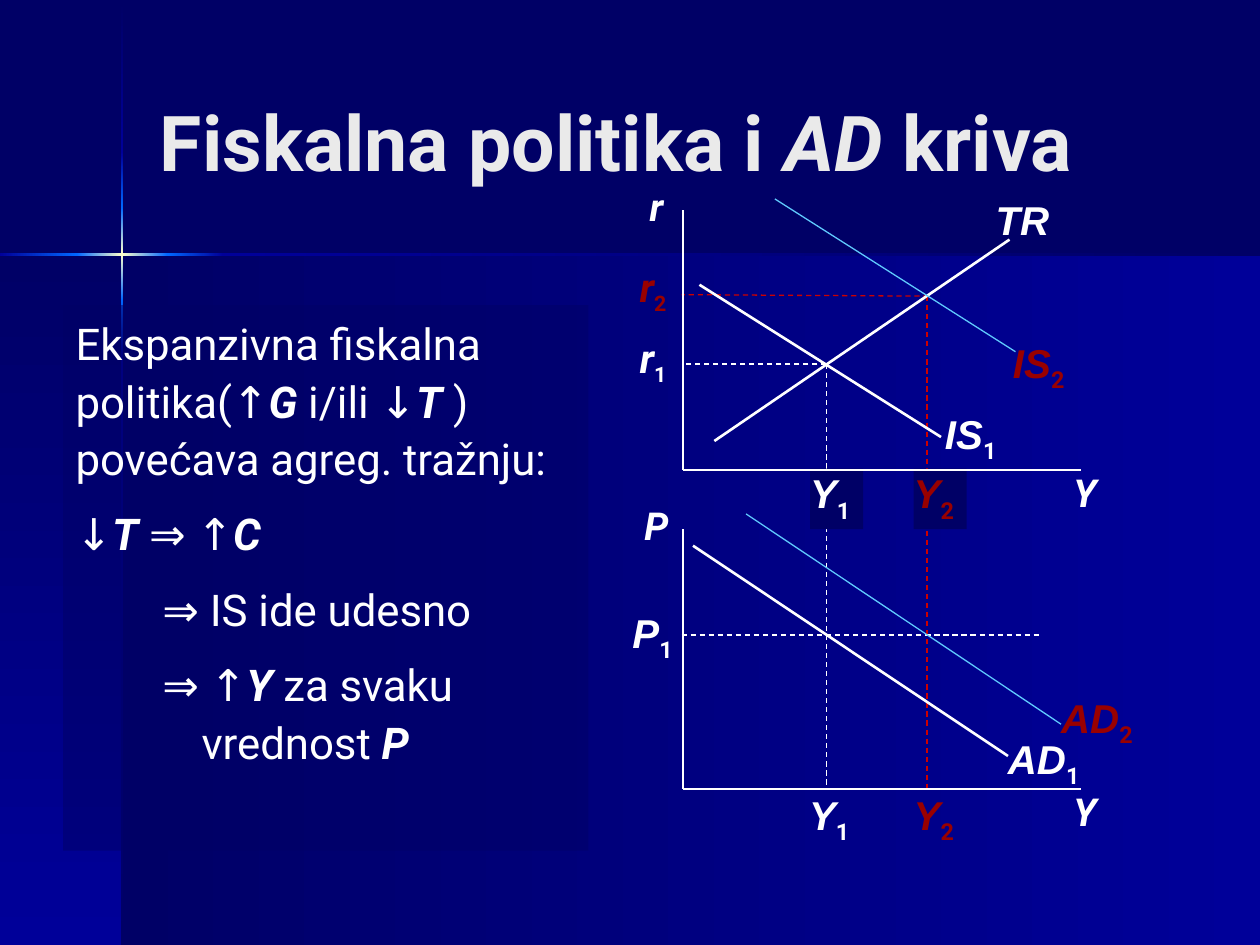
from dataclasses import dataclass
from typing import Optional

from lxml.etree import SubElement
from pptx import Presentation
from pptx.dml.color import RGBColor
from pptx.enum.dml import MSO_LINE
from pptx.enum.shapes import MSO_CONNECTOR, MSO_SHAPE
from pptx.enum.text import MSO_ANCHOR, MSO_AUTO_SIZE, PP_ALIGN
from pptx.oxml.ns import qn
from pptx.util import Cm, Pt

NIGHT = RGBColor(0x00, 0x00, 0x66)
ROYAL = RGBColor(0x00, 0x00, 0x99)
AZURE = RGBColor(0x00, 0x66, 0xFF)
CREAM = RGBColor(0xFF, 0xFF, 0xCC)
WHITE = RGBColor(0xFF, 0xFF, 0xFF)
SILVER = RGBColor(0xEA, 0xEA, 0xEA)
SKY = RGBColor(0x60, 0xC9, 0xFD)
RED = RGBColor(0xCC, 0x00, 0x00)
MAROON = RGBColor(0x99, 0x00, 0x00)

WIDTH, HEIGHT = 25.4, 19.05
CROSS_X, CROSS_Y, RAY = 2.46, 5.13, 0.05
AXIS_X, AXIS_END, AXIS_HEIGHT = 13.77, 21.79, 5.23
PANEL_TOPS = {"r": 4.24, "P": 10.67}


@dataclass(frozen=True)
class LabelStyle:
    height: float
    side: float = 0
    top: float = 0
    bottom: float = 0
    size: int = 23
    font: str = "Arial"
    sub_size: int = 23


TIGHT = LabelStyle(0.97)
RATE = LabelStyle(0.97, font="Roboto", sub_size=21)
CURVE = LabelStyle(1.22, bottom=0.25)
AXIS = LabelStyle(1.19, 0.25, 0.13, 0.13, 22, "Roboto")


@dataclass(frozen=True)
class Label:
    base: str
    sub: str
    x: float
    y: float
    width: float
    style: LabelStyle
    color: RGBColor = WHITE
    fill: Optional[RGBColor] = None
    align: PP_ALIGN = PP_ALIGN.LEFT


@dataclass(frozen=True)
class Line:
    x1: float
    y1: float
    x2: float
    y2: float
    color: RGBColor = WHITE
    weight: float = 1.5
    dashed: bool = False


GUIDES = [
    Line(18.69, 5.97, 18.69, 15.9, RED, 0.75, True),
    Line(18.72, 5.97, 13.74, 5.94, RED, 0.75, True),
    Line(16.66, 7.34, 16.66, 15.9, WHITE, 0.75, True),
    Line(16.66, 7.34, 13.74, 7.34, WHITE, 0.75, True),
    Line(13.74, 12.8, 20.96, 12.8, WHITE, 0.75, True),
]
CURVES = [
    Line(14.1, 5.74, 18.97, 8.81),
    Line(14.4, 8.89, 20.35, 4.83),
    Line(13.97, 11, 20.32, 15.24),
    Line(15.04, 10.36, 21.39, 14.6, SKY, 0.75),
    Line(15.62, 4.01, 20.47, 7.09, SKY, 0.75),
]
LABELS = [
    Label("Y", "2", 18.42, 9.45, 1.07, CURVE, MAROON, NIGHT),
    Label("Y", "2", 18.42, 15.93, 1.07, TIGHT, MAROON),
    Label("r", "2", 12.9, 5.28, 1.07, RATE, MAROON),
    Label("Y", "1", 16.33, 9.45, 1.07, CURVE, fill=NIGHT),
    Label("Y", "1", 16.31, 15.93, 1.07, TIGHT),
    Label("r", "1", 12.9, 6.71, 1.07, RATE),
    Label("IS", "1", 19.05, 8.26, 1.47, CURVE),
    Label("TR", "", 20.07, 3.94, 1.7, TIGHT),
    Label("AD", "1", 20.32, 14.81, 1.91, CURVE),
    Label("P", "1", 12.75, 12.27, 1.07, CURVE),
    Label("AD", "2", 21.39, 13.97, 1.91, CURVE, MAROON),
    Label("IS", "2", 20.42, 6.81, 1.47, CURVE, MAROON),
]

# Asterisks enclose emphasised words; the numbers are left margin and indent.
EXPLANATION = [
    ("Ekspanzivna fiskalna politika(↑*G* i/ili ↓*T* ) povećava agreg. tražnju:", 0, 0),
    ("↓*T* ⇒ ↑*C*", 0, 0),
    ("⇒ IS ide udesno", 1.75, 0),
    ("⇒ ↑*Y* za svaku vrednost *P*", 2.54, -0.79),
]


def place(shape, x: float, y: float, width: float, height: float) -> None:
    shape.left, shape.top, shape.width, shape.height = map(Cm, (x, y, width, height))


def add_band(shapes, x, y, width, height, start, end, vertical=False) -> None:
    """Add a borderless rectangle with a two-colour gradient."""
    band = shapes.add_shape(MSO_SHAPE.RECTANGLE, Cm(x), Cm(y), Cm(width), Cm(height))
    band.shadow.inherit = False
    band.line.fill.background()
    band.fill.gradient()
    band.fill.gradient_angle = 270 if vertical else 0
    for stop, color in zip(band.fill.gradient_stops, (start, end)):
        stop.color.rgb = color


def add_backdrop(shapes) -> None:
    depth = HEIGHT - CROSS_Y
    add_band(shapes, CROSS_X, CROSS_Y, WIDTH - CROSS_X, depth, NIGHT, ROYAL)
    add_band(shapes, 0, CROSS_Y, CROSS_X, depth, NIGHT, ROYAL, True)
    glow = [NIGHT, ROYAL, AZURE, CREAM, AZURE, ROYAL, NIGHT]
    down = list(zip([0.03, 3.07, 4.19, 5.12, 6.05, 7.16, HEIGHT], glow))
    across = list(zip([0, 1.55, 2.46, 3.38, 4.5, WIDTH], glow[1:]))
    for (y1, start), (y2, end) in zip(down, down[1:]):
        add_band(shapes, CROSS_X - RAY / 2, y1, RAY, y2 - y1, start, end, True)
    for (x1, start), (x2, end) in zip(across, across[1:]):
        add_band(shapes, x1, CROSS_Y - RAY / 2, x2 - x1, RAY, start, end)


def add_line(shapes, line: Line) -> None:
    ends = map(Cm, (line.x1, line.y1, line.x2, line.y2))
    connector = shapes.add_connector(MSO_CONNECTOR.STRAIGHT, *ends)
    connector.line.color.rgb = line.color
    connector.line.width = Pt(line.weight)
    if line.dashed:
        connector.line.dash_style = MSO_LINE.DASH
    SubElement(connector._element.spPr, qn("a:effectLst"))


def add_label(shapes, label: Label) -> None:
    style = label.style
    box = shapes.add_textbox(Cm(label.x), Cm(label.y), Cm(label.width), Cm(style.height))
    if label.fill is not None:
        box.fill.solid()
        box.fill.fore_color.rgb = label.fill
    frame = box.text_frame
    frame.word_wrap = True
    frame.margin_left = frame.margin_right = Cm(style.side)
    frame.margin_top, frame.margin_bottom = Cm(style.top), Cm(style.bottom)
    paragraph = frame.paragraphs[0]
    paragraph.alignment = label.align
    paragraph.font.bold = True
    paragraph.font.color.rgb = label.color
    base = paragraph.add_run()
    base.text = label.base
    base.font.name, base.font.size, base.font.italic = style.font, Pt(style.size), True
    if label.sub:
        sub = paragraph.add_run()
        sub.text = label.sub
        sub.font.name, sub.font.size = "Roboto", Pt(style.sub_size)
        sub._r.get_or_add_rPr().set("baseline", "-25000")


def write(paragraph, marked: str, size: int, color: RGBColor, bold: bool) -> None:
    """Write text whose starred parts are bold italic."""
    font = paragraph.font
    font.name, font.size, font.bold, font.color.rgb = "Roboto", Pt(size), bold, color
    for index, part in enumerate(marked.split("*")):
        if part:
            run = paragraph.add_run()
            run.text = part
            if index % 2:
                run.font.bold = run.font.italic = True


def fill_title(title) -> None:
    place(title, 2.97, 0.84, 20.96, 3.99)
    title.text_frame.auto_size = MSO_AUTO_SIZE.NONE
    title.text_frame.vertical_anchor = MSO_ANCHOR.MIDDLE
    heading = title.text_frame.paragraphs[0]
    heading.alignment = PP_ALIGN.LEFT
    write(heading, "Fiskalna politika i *AD* kriva", 44, SILVER, True)


def fill_explanation(body) -> None:
    place(body, 1.27, 6.15, 10.59, 11)
    body.fill.solid()
    body.fill.fore_color.rgb = NIGHT
    tint = body._element.spPr.find(qn("a:solidFill"))[0]
    SubElement(tint, qn("a:alpha"), val="50000")
    frame = body.text_frame
    frame.auto_size = MSO_AUTO_SIZE.NONE
    for index, (marked, margin, indent) in enumerate(EXPLANATION):
        paragraph = frame.add_paragraph() if index else frame.paragraphs[0]
        paragraph.line_spacing = 1.1
        paragraph.space_before = Pt(10 if index else 0)
        properties = paragraph._p.get_or_add_pPr()
        properties.set("marL", str(Cm(margin)))
        properties.set("indent", str(Cm(indent)))
        SubElement(properties, qn("a:buNone"))
        write(paragraph, marked, 25, WHITE, False)


def main() -> None:
    deck = Presentation()
    deck.slide_width, deck.slide_height = Cm(WIDTH), Cm(HEIGHT)
    slide = deck.slides.add_slide(deck.slide_layouts[1])
    slide.background.fill.solid()
    slide.background.fill.fore_color.rgb = NIGHT
    shapes = slide.shapes
    title, body = slide.placeholders
    add_backdrop(shapes)
    for placeholder in (title, body):
        shapes._spTree.append(placeholder._element)
    fill_title(title)
    fill_explanation(body)

    axes, axis_labels = [], []
    for symbol, top in PANEL_TOPS.items():
        base = top + AXIS_HEIGHT
        axes += [Line(AXIS_X, top, AXIS_X, base, weight=1),
                 Line(AXIS_X, base, AXIS_END, base, weight=1)]
        axis_labels += [Label("Y", "", 21.39, base - 0.15, 1.47, AXIS),
                        Label(symbol, "", 12.7, top - 0.69, 1.07, AXIS, align=PP_ALIGN.CENTER)]
    for guide in GUIDES:
        add_line(shapes, guide)
    for label in LABELS + axis_labels:
        add_label(shapes, label)
    for line in axes + CURVES:
        add_line(shapes, line)
    deck.save("out.pptx")


if __name__ == "__main__":
    main()
